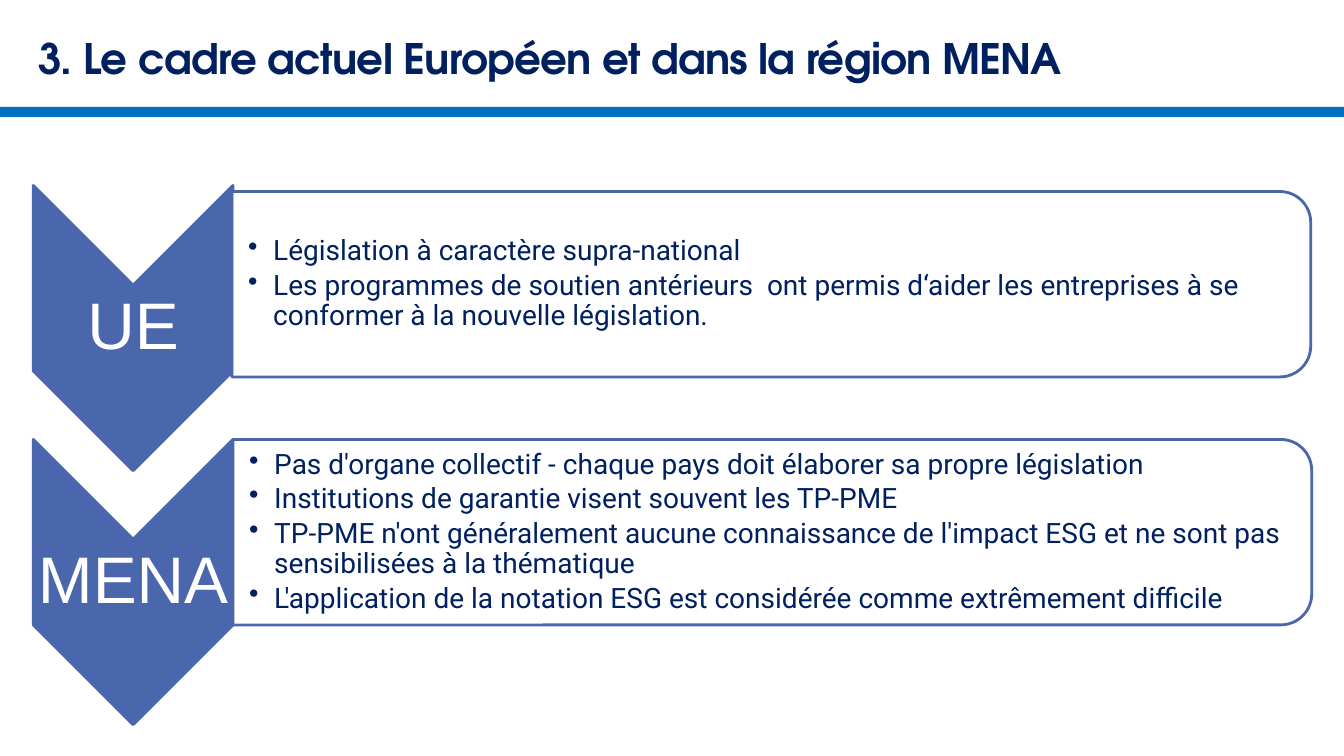
from lxml.etree import SubElement
from pptx import Presentation
from pptx.dml.color import RGBColor
from pptx.enum.shapes import MSO_SHAPE
from pptx.enum.text import MSO_ANCHOR, PP_ALIGN
from pptx.oxml.ns import qn
from pptx.util import Inches, Pt

NAVY = RGBColor(0x00, 0x20, 0x60)
BLUE = RGBColor(0x00, 0x70, 0xC0)
INDIGO = RGBColor(0x4A, 0x66, 0xAC)
WHITE = RGBColor(0xFF, 0xFF, 0xFF)

ROWS = [
    ("UE", 1.84, 2.3, 1.9, [
        "Législation à caractère supra-national",
        "Les programmes de soutien antérieurs  ont permis d‘aider les entreprises "
        "à se conformer à la nouvelle législation.",
    ]),
    ("MENA", 4.36, 2.31, 4.36, [
        "Pas d'organe collectif - chaque pays doit élaborer sa propre législation",
        "Institutions de garantie visent souvent les TP-PME",
        "TP-PME n'ont généralement aucune connaissance de l'impact ESG et ne sont "
        "pas sensibilisées à la thématique",
        "L'application de la notation ESG est considérée comme extrêmement difficile",
    ]),
]


def add_text(slide, box, lines, font, size, color, anchor, insets):
    frame = slide.shapes.add_textbox(*map(Inches, box)).text_frame
    frame.word_wrap = True
    frame.vertical_anchor = anchor
    frame.margin_left, frame.margin_top, frame.margin_right, frame.margin_bottom = map(
        Inches, insets)
    frame.text = "\n".join(lines)
    for para in frame.paragraphs:
        para.line_spacing = 0.9
        para.font.name = font
        para.font.size = Pt(size)
        para.font.color.rgb = color
    return frame


def add_bullet(para):
    props = para._p.get_or_add_pPr()
    props.set("marL", str(Inches(0.25)))
    props.set("indent", str(-Inches(0.25)))
    props.insert_element_before(
        props.makeelement(qn("a:buChar"), {"char": "•"}), "a:tabLst", "a:defRPr", "a:extLst")
    para.space_after = Pt(3)


def add_turned(slide, kind, left, top, width, height, fill):
    shape = slide.shapes.add_shape(
        kind, Inches(left + (width - height) / 2), Inches(top + (height - width) / 2),
        Inches(height), Inches(width))
    shape.rotation = 90
    shape.shadow.inherit = False
    shape.fill.solid()
    shape.fill.fore_color.rgb = fill
    shape.line.color.rgb = INDIGO
    shape.line.width = Pt(2)
    return shape


def add_header(slide, left, top, width, height):
    bar = slide.shapes.add_shape(
        MSO_SHAPE.RECTANGLE, Inches(left), Inches(top + height - 0.1),
        Inches(width), Inches(0.1))
    bar.shadow.inherit = False
    bar.fill.solid()
    bar.fill.fore_color.rgb = BLUE
    bar.line.fill.background()
    title = add_text(
        slide, (left + 0.28, top + 0.15, width - 0.54, 0.73),
        ["3. Le cadre actuel Européen et dans la région MENA"],
        "TeX Gyre Adventor", 30, NAVY, MSO_ANCHOR.BOTTOM, (0.1, 0.05, 0.1, 0.05))
    para = title.paragraphs[0]
    para.font.bold = True
    para.runs[0].font._element.set("spc", "-50")


def add_arrow(slide, label, left, top, width, height):
    add_turned(slide, MSO_SHAPE.CHEVRON, left, top, width, height, INDIGO)
    frame = add_text(
        slide, (left, top + width / 2, width, height - width), [label],
        "Arial", 47, WHITE, MSO_ANCHOR.MIDDLE, (0.03,) * 4)
    frame.paragraphs[0].alignment = PP_ALIGN.CENTER


def add_panel(slide, lines, left, top, width, height):
    panel = add_turned(
        slide, MSO_SHAPE.ROUND_2_SAME_RECTANGLE, left, top, width, height, WHITE)
    color = panel.fill._xPr.find(qn("a:solidFill"))[0]
    SubElement(color, qn("a:alpha"), val="90000")
    frame = add_text(
        slide, (left, top + 0.09, width - 0.09, height - 0.18), lines,
        "Roboto", 20, NAVY, MSO_ANCHOR.MIDDLE, (0.16, 0.01, 0.01, 0.01))
    for para in frame.paragraphs:
        add_bullet(para)


def main():
    deck = Presentation()
    deck.slide_width = Inches(13.33)
    deck.slide_height = Inches(7.5)
    slide = deck.slides.add_slide(deck.slide_layouts[6])
    add_header(slide, 0, 0, 13.33, 1.16)
    for label, top, side, head, lines in ROWS:
        add_arrow(slide, label, 0.33, top, 1.98, 2.83)
        add_panel(slide, lines, side, head, 10.7, 1.84)
    deck.save("out.pptx")


if __name__ == "__main__":
    main()
